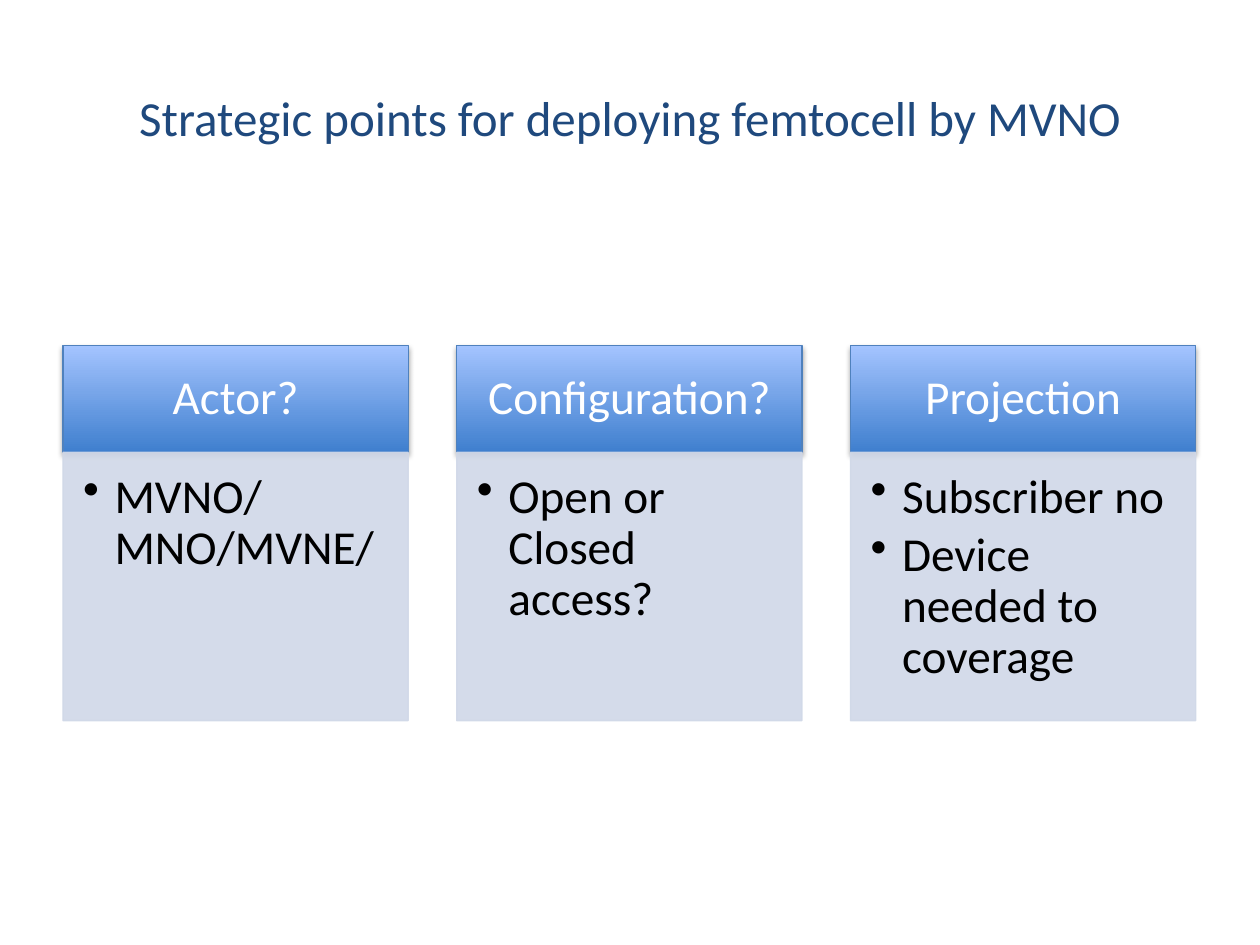
"""Builds a slide with three headed columns on deploying femtocells."""
from lxml import etree
from pptx import Presentation
from pptx.dml.color import RGBColor
from pptx.enum.shapes import MSO_SHAPE
from pptx.enum.text import MSO_ANCHOR, PP_ALIGN
from pptx.oxml import parse_xml
from pptx.oxml.ns import nsdecls, qn
from pptx.util import Inches, Pt

RECT = MSO_SHAPE.RECTANGLE
CENTER, LEFT = PP_ALIGN.CENTER, PP_ALIGN.LEFT
MIDDLE, TOP = MSO_ANCHOR.MIDDLE, MSO_ANCHOR.TOP

TITLE = "Strategic points for deploying femtocell by MVNO"
COLUMNS = [
    ("Actor?", ["MVNO/MNO/MVNE/"]),
    ("Configuration?", ["Open or Closed access?"]),
    ("Projection", ["Subscriber no", "Device needed to coverage"]),
]
COLORS = {"title": "1F497D", "head_low": "3F7FCE", "head_high": "A4C4FF",
          "head_line": "4F81BD", "head_text": "FFFFFF",
          "body": "D0D8E8", "body_text": "000000"}
FONT = "Calibri"
LEFT_EDGE, COL_W, GAP = 0.5, 2.74, 0.385
HEAD_TOP, HEAD_H, BODY_H = 2.74, 0.85, 2.13
SIDES = ("left", "top", "right", "bottom")
HEAD_FORMAT = {"align": CENTER, "anchor": MIDDLE, "color": "head_text",
               "insets": (0.21, 0.12, 0.21, 0.12)}
BODY_FORMAT = {"align": LEFT, "anchor": TOP, "color": "body_text",
               "insets": (0.16, 0.16, 0.21, 0.24)}
SHADOW = (f'<a:outerShdw {nsdecls("a")} blurRad="40000" dist="23000" dir="5400000" '
          'rotWithShape="0"><a:srgbClr val="000000"><a:alpha val="35000"/>'
          '</a:srgbClr></a:outerShdw>')


def rgb(name):
    return RGBColor.from_string(COLORS[name])


def set_font(r, size, color):
    for key, value in {"name": FONT, "size": Pt(size), "bold": False}.items():
        setattr(r.font, key, value)
    r.font.color.rgb = rgb(color)


def add_box(slide, x, y, h, lines, fmt):
    sp = slide.shapes.add_shape(RECT, *map(Inches, (x, y, COL_W, h)))
    sp.shadow.inherit = False
    sp.line.width = Pt(0.75)
    tf = sp.text_frame
    tf.word_wrap = True
    tf.vertical_anchor = fmt["anchor"]
    for side, inset in zip(SIDES, fmt["insets"]):
        setattr(tf, f"margin_{side}", Inches(inset))
    for i, line in enumerate(lines):
        p = tf.add_paragraph() if i else tf.paragraphs[0]
        p.alignment = fmt["align"]
        p.line_spacing = 0.9
        r = p.add_run()
        r.text = line
        set_font(r, 27, fmt["color"])
    return sp


def add_head(slide, x, text):
    sp = add_box(slide, x, HEAD_TOP, HEAD_H, [text], HEAD_FORMAT)
    sp.fill.gradient()
    sp.fill.gradient_angle = 90
    for stop, name in zip(sp.fill.gradient_stops, ("head_low", "head_high")):
        stop.color.rgb = rgb(name)
    sp.line.color.rgb = rgb("head_line")
    sp._element.spPr.find(qn("a:effectLst")).append(parse_xml(SHADOW))


def add_body(slide, x, items):
    sp = add_box(slide, x, HEAD_TOP + HEAD_H, BODY_H, items, BODY_FORMAT)
    sp.fill.solid()
    sp.fill.fore_color.rgb = rgb("body")
    sp.line.color.rgb = rgb("body")
    for clr in sp._element.spPr.iter(qn("a:srgbClr")):
        etree.SubElement(clr, qn("a:alpha")).set("val", "90000")
    for p in sp.text_frame.paragraphs:
        p.level = 1
        p.space_after = Pt(4)
        pPr = p._p.get_or_add_pPr()
        pPr.set("marL", str(Inches(0.25)))
        pPr.set("indent", str(-Inches(0.25)))
        etree.SubElement(pPr, qn("a:buChar")).set("char", "•")


def main():
    prs = Presentation()
    prs.slide_width, prs.slide_height = Inches(10), Inches(7.5)
    slide = prs.slides.add_slide(prs.slide_layouts[5])
    title = slide.shapes.title
    box = {"left": 0.5, "top": 0.3, "width": 9, "height": 1.25}
    for key, value in box.items():
        setattr(title, key, Inches(value))
    title.text_frame.vertical_anchor = MIDDLE
    p = title.text_frame.paragraphs[0]
    p.alignment = CENTER
    r = p.add_run()
    r.text = TITLE
    set_font(r, 28, "title")
    for i, (head, items) in enumerate(COLUMNS):
        x = LEFT_EDGE + i * (COL_W + GAP)
        add_head(slide, x, head)
        add_body(slide, x, items)
    prs.save("out.pptx")


if __name__ == "__main__":
    main()
